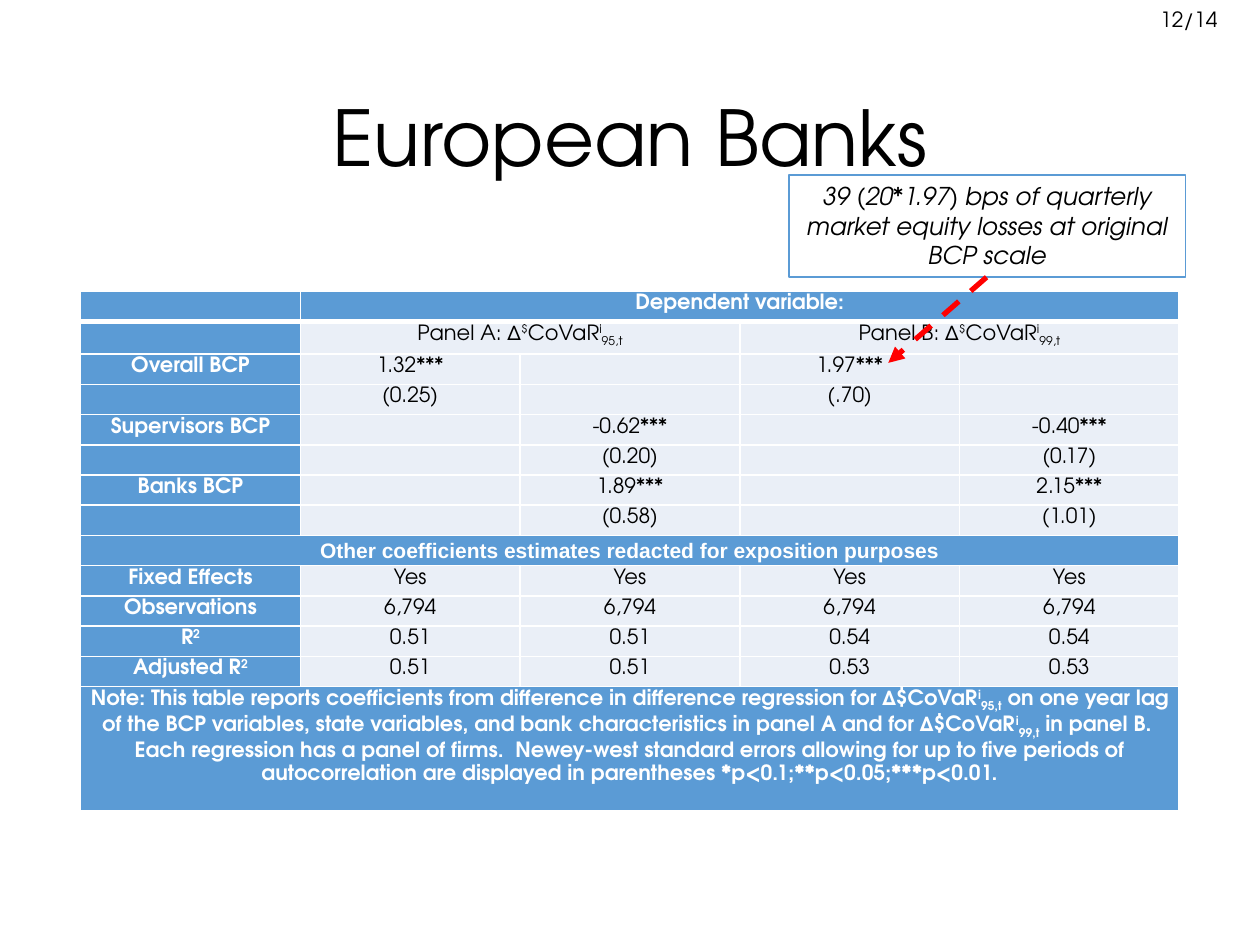
import pptx
import pptx.util
import pptx.dml.color
import pptx.enum.dml
import pptx.enum.shapes
import pptx.enum.text
import pptx.oxml
import pptx.oxml.ns
import lxml.etree

Inches = pptx.util.Inches
Pt = pptx.util.Pt
ALIGN = pptx.enum.text.PP_ALIGN
ANCHOR = pptx.enum.text.MSO_ANCHOR
qn = pptx.oxml.ns.qn

COLORS = {"black": "000000", "white": "FFFFFF", "blue": "5B9BD5", "pale": "EAEFF7", "red": "FF0000"}
FONT = "TeX Gyre Adventor"
BASELINES = {"^": "30000", "_": "-25000"}


def rgb(name):
    return pptx.dml.color.RGBColor.from_string(COLORS[name])


def write(paragraph, text, color, paragraph_format, run_format):
    for name, value in paragraph_format.items():
        setattr(paragraph, name, value)
    for piece in text.split("|"):
        run = paragraph.add_run()
        run.text = piece.lstrip("^_")
        for name, value in {"name": FONT, **run_format}.items():
            setattr(run.font, name, value)
        run.font.color.rgb = rgb(color)
        if piece[:1] in BASELINES:
            run.font._element.set("baseline", BASELINES[piece[0]])


deck = pptx.Presentation()
deck.slide_width, deck.slide_height = Inches(10), Inches(7.5)
slide = deck.slides.add_slide(deck.slide_layouts[6])

page = slide.shapes.add_textbox(Inches(9.11), Inches(0), Inches(0.88), Inches(0.3))
page.text_frame.word_wrap = True
write(page.text_frame.paragraphs[0], "12/14", "black", {}, {"size": Pt(12)})

title = slide.shapes.add_textbox(Inches(0.69), Inches(0.4), Inches(8.62), Inches(1.45))
title.text_frame.word_wrap = True
title.text_frame.vertical_anchor = ANCHOR.MIDDLE
write(title.text_frame.paragraphs[0], "European Banks", "black",
      {"alignment": ALIGN.CENTER, "line_spacing": 0.9}, {"size": Pt(44)})

redacted = "Other coefficients estimates redacted for exposition purposes"
note = (
    "Note: This table reports coefficients from difference in difference regression for Δ$CoVaR|^i|_95,t"
    "| on one year lag of the BCP variables, state variables, and bank characteristics in panel A "
    "and for Δ$CoVaR|^i|_99,t| in panel B.  Each regression has a panel of firms.  Newey-west standard "
    "errors allowing for up to five periods of autocorrelation are displayed in parentheses "
    "*p<0.1;**p<0.05;***p<0.01."
)
results = [
    ["", "Dependent variable:", "", "", ""],
    ["", "Panel A: Δ|^$|CoVaR|^i|_95,t", "", "Panel B: Δ|^$|CoVaR|^i|_99,t", ""],
    ["Overall BCP", "1.32***", "", "1.97***", ""],
    ["", "(0.25)", "", "(.70)", ""],
    ["Supervisors BCP", "", "-0.62***", "", "-0.40***"],
    ["", "", "(0.20)", "", "(0.17)"],
    ["Banks BCP", "", "1.89***", "", "2.15***"],
    ["", "", "(0.58)", "", "(1.01)"],
    [redacted, "", "", "", ""],
    ["Fixed Effects", "Yes", "Yes", "Yes", "Yes"],
    ["Observations", "6,794", "6,794", "6,794", "6,794"],
    ["R|^2", "0.51", "0.51", "0.54", "0.54"],
    ["Adjusted R|^2", "0.51", "0.51", "0.53", "0.53"],
    [note, "", "", "", ""],
]
full_rows = (0, 8, 13)
spans = [(0, 1, 4), (1, 1, 2), (1, 3, 4), (8, 0, 4), (13, 0, 4)]

regression = slide.shapes.add_table(len(results), 5, Inches(0.64), Inches(2.31),
                                    Inches(8.72), Inches(0.24 * len(results))).table
for column in regression.columns:
    column.width = Inches(1.744)
for row in regression.rows:
    row.height = Inches(0.24)

cell_format = {"margin_left": Inches(0.05), "margin_right": Inches(0.05),
               "margin_top": 0, "margin_bottom": 0}
for r, values in enumerate(results):
    for c, value in enumerate(values):
        cell = regression.cell(r, c)
        for name, setting in cell_format.items():
            setattr(cell, name, setting)
        heading = c == 0 or r in full_rows
        cell.fill.solid()
        cell.fill.fore_color.rgb = rgb("blue" if heading else "pale")

        borders = cell._tc.get_or_add_tcPr()
        for position, side in enumerate(("lnL", "lnR", "lnT", "lnB")):
            thick = (r, side) in ((0, "lnB"), (1, "lnT"))
            border = lxml.etree.Element(qn("a:" + side), w=str(Pt(3 if thick else 1)))
            border_fill = lxml.etree.SubElement(border, qn("a:solidFill"))
            lxml.etree.SubElement(border_fill, qn("a:srgbClr"), val=COLORS["white"])
            borders.insert(position, border)

        paragraph = cell.text_frame.paragraphs[0]
        if value:
            write(paragraph, value, "white" if heading else "black",
                  {"alignment": ALIGN.CENTER, "line_spacing": 1.15},
                  {"size": Pt(12), "bold": heading, "name": "Arial" if value == redacted else FONT})
        else:
            lxml.etree.SubElement(paragraph._p, qn("a:endParaRPr"), sz="1200")
for r, first, last in spans:
    regression.cell(r, first).merge(regression.cell(r, last))

callout = slide.shapes.add_shape(pptx.enum.shapes.MSO_SHAPE.RECTANGLE,
                                 Inches(6.26), Inches(1.39), Inches(3.15), Inches(0.81))
callout.shadow.inherit = False
callout.fill.solid()
callout.fill.fore_color.rgb = rgb("white")
callout.line.color.rgb = rgb("blue")
callout.line.width = Pt(1)
callout.text_frame.word_wrap = True
callout.text_frame.vertical_anchor = ANCHOR.TOP
write(callout.text_frame.paragraphs[0],
      "39 (20*1.97) bps of quarterly market equity losses at original BCP scale",
      "black", {"alignment": ALIGN.CENTER}, {"size": Pt(14), "italic": True})

pointer = slide.shapes.add_connector(pptx.enum.shapes.MSO_CONNECTOR.STRAIGHT,
                                     Inches(7.83), Inches(2.2), Inches(7.05), Inches(2.88))
pointer.line.color.rgb = rgb("red")
pointer.line.width = Pt(3)
pointer.line.dash_style = pptx.enum.dml.MSO_LINE.DASH
lxml.etree.SubElement(pointer.line._get_or_add_ln(), qn("a:tailEnd"), type="triangle")
lxml.etree.SubElement(pointer._element.spPr, qn("a:effectLst"))

deck.save("out.pptx")
